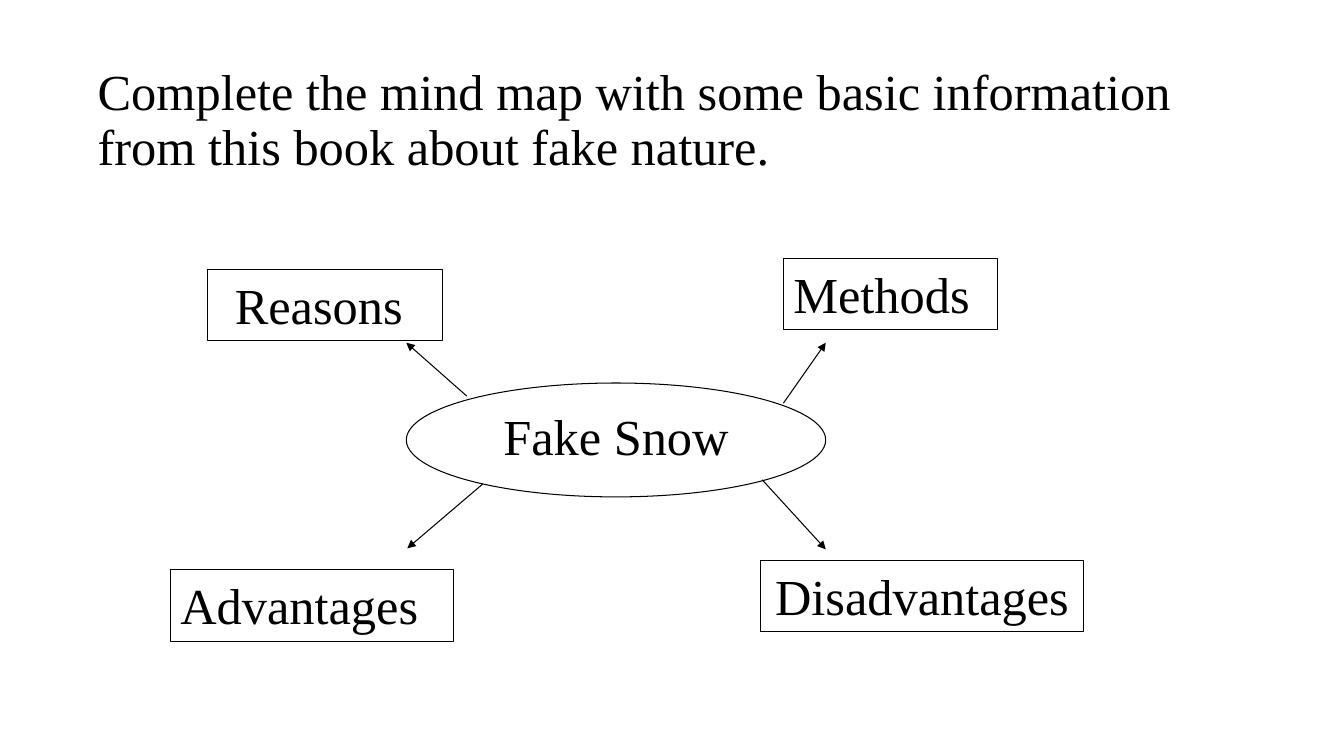
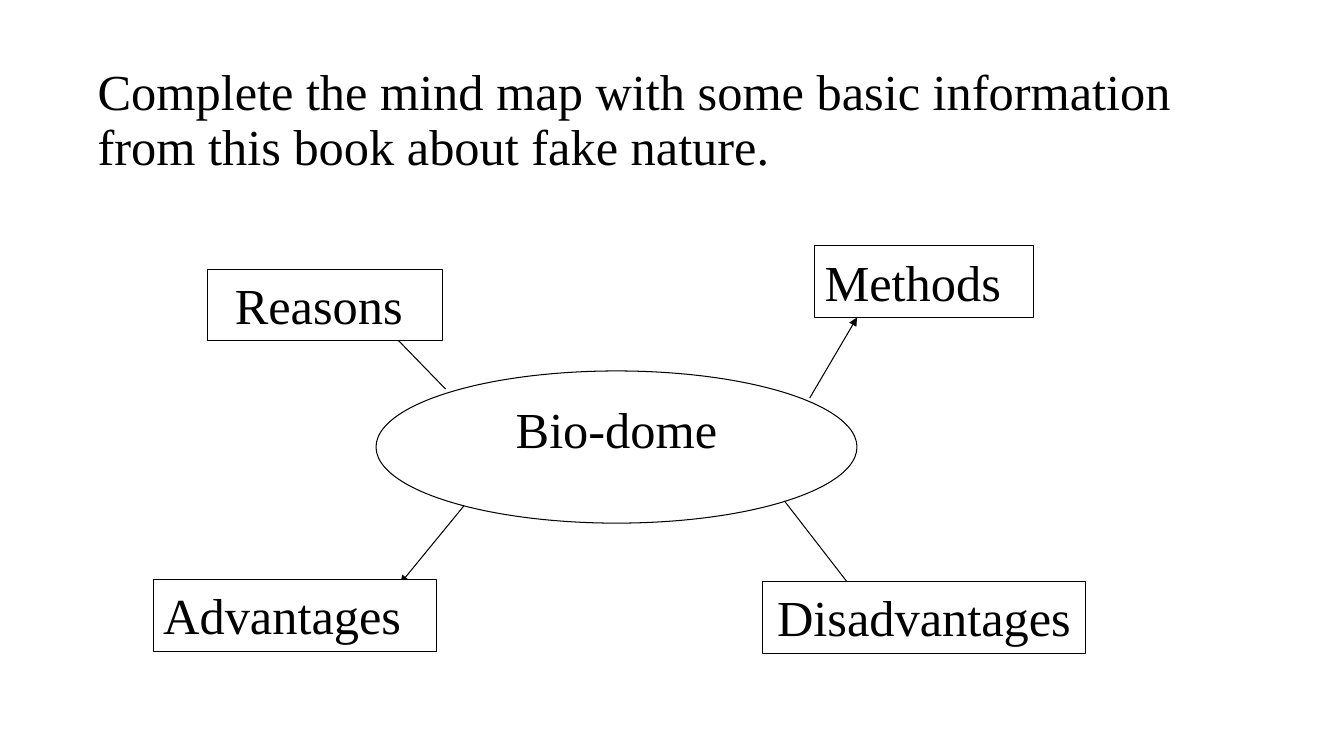
"""Build two mind-map slides that share a title and four labelled branches."""
from pptx import Presentation
from pptx.dml.color import RGBColor
from pptx.enum.shapes import MSO_CONNECTOR, MSO_SHAPE
from pptx.enum.text import MSO_ANCHOR, PP_ALIGN
from pptx.oxml.ns import qn
from pptx.util import Inches, Pt
from lxml import etree

RECTANGLE, OVAL = MSO_SHAPE.RECTANGLE, MSO_SHAPE.OVAL
STRAIGHT = MSO_CONNECTOR.STRAIGHT
TOP, MIDDLE = MSO_ANCHOR.TOP, MSO_ANCHOR.MIDDLE
LEFT, CENTER = PP_ALIGN.LEFT, PP_ALIGN.CENTER

COLORS = {"ink": "000000", "paper": "FFFFFF"}
FONT, TEXT_SIZE, LINE_WIDTH = "Times New Roman", 36, 0.75
SLIDE_SIZE = (13.33, 7.5)
TITLE = "Complete the mind map with some basic information from this book about fake nature."
TITLE_AREA = (0.87, 0.65, 11.69, 1.11)
BRANCH_HEIGHT = 0.71
BRANCH_STYLES = {
    "Reasons ": CENTER,
    "Methods": LEFT,
    "Advantages": LEFT,
    "Disadvantages": CENTER,
}

MIND_MAPS = [
    {
        "topic": "Fake Snow",
        "oval": (4.03, 3.8, 4.16, 1.13),
        "branches": {
            "Reasons ": {"box": (2.06, 2.67, 2.33), "arrow": (4.63, 3.93, 4.03, 3.4)},
            "Methods": {"box": (7.77, 2.56, 2.12), "arrow": (7.77, 4, 8.19, 3.4)},
            "Advantages": {"box": (1.69, 5.65, 2.81), "arrow": (4.79, 4.8, 4.04, 5.44)},
            "Disadvantages": {"box": (7.54, 5.56, 3.21), "arrow": (7.56, 4.76, 8.19, 5.45)},
        },
    },
    {
        "topic": "Bio-dome",
        "oval": (3.73, 3.68, 4.77, 1.51),
        "branches": {
            "Reasons ": {"box": (2.06, 2.67, 2.33), "arrow": (4.42, 3.86, 3.73, 3.15)},
            "Methods": {"box": (8.08, 2.44, 2.17), "arrow": (8.03, 3.95, 8.5, 3.15)},
            "Advantages": {"box": (1.52, 5.75, 2.81), "arrow": (4.6, 5.02, 3.97, 5.79)},
            "Disadvantages": {"box": (7.56, 5.77, 3.21), "arrow": (7.78, 4.97, 8.5, 5.9)},
        },
    },
]


def color(name):
    return RGBColor.from_string(COLORS[name])


def inches(values):
    return [Inches(value) for value in values]


def set_text(shape, text, align, anchor=TOP, spacing=1.0):
    frame = shape.text_frame
    frame.word_wrap = True
    frame.vertical_anchor = anchor
    paragraph = frame.paragraphs[0]
    paragraph.text = text
    paragraph.alignment = align
    paragraph.line_spacing = spacing
    paragraph.font.name = FONT
    paragraph.font.size = Pt(TEXT_SIZE)
    paragraph.font.color.rgb = color("ink")


def set_line(item):
    item.line.color.rgb = color("ink")
    item.line.width = Pt(LINE_WIDTH)


def add_title(slide):
    title = slide.shapes.add_textbox(*inches(TITLE_AREA))
    set_text(title, TITLE, LEFT, MIDDLE, 0.9)


def add_node(slide, preset, area, text, align):
    node = slide.shapes.add_shape(preset, *inches(area))
    node.shadow.inherit = False
    node.fill.solid()
    node.fill.fore_color.rgb = color("paper")
    set_line(node)
    set_text(node, text, align)


def add_arrow(slide, ends):
    arrow = slide.shapes.add_connector(STRAIGHT, *inches(ends))
    set_line(arrow)
    etree.SubElement(arrow.line._get_or_add_ln(), qn("a:tailEnd"), type="triangle")
    etree.SubElement(arrow._element.spPr, qn("a:effectLst"))


def add_mind_map(slide, mind_map):
    branches = mind_map["branches"]
    add_node(slide, OVAL, mind_map["oval"], mind_map["topic"], CENTER)
    for branch in branches.values():
        add_arrow(slide, branch["arrow"])
    for label, branch in branches.items():
        area = (*branch["box"], BRANCH_HEIGHT)
        add_node(slide, RECTANGLE, area, label, BRANCH_STYLES[label])


def main():
    presentation = Presentation()
    presentation.slide_width, presentation.slide_height = inches(SLIDE_SIZE)
    blank = presentation.slide_layouts[6]
    for mind_map in MIND_MAPS:
        slide = presentation.slides.add_slide(blank)
        add_title(slide)
        add_mind_map(slide, mind_map)
    presentation.save("out.pptx")


if __name__ == "__main__":
    main()
